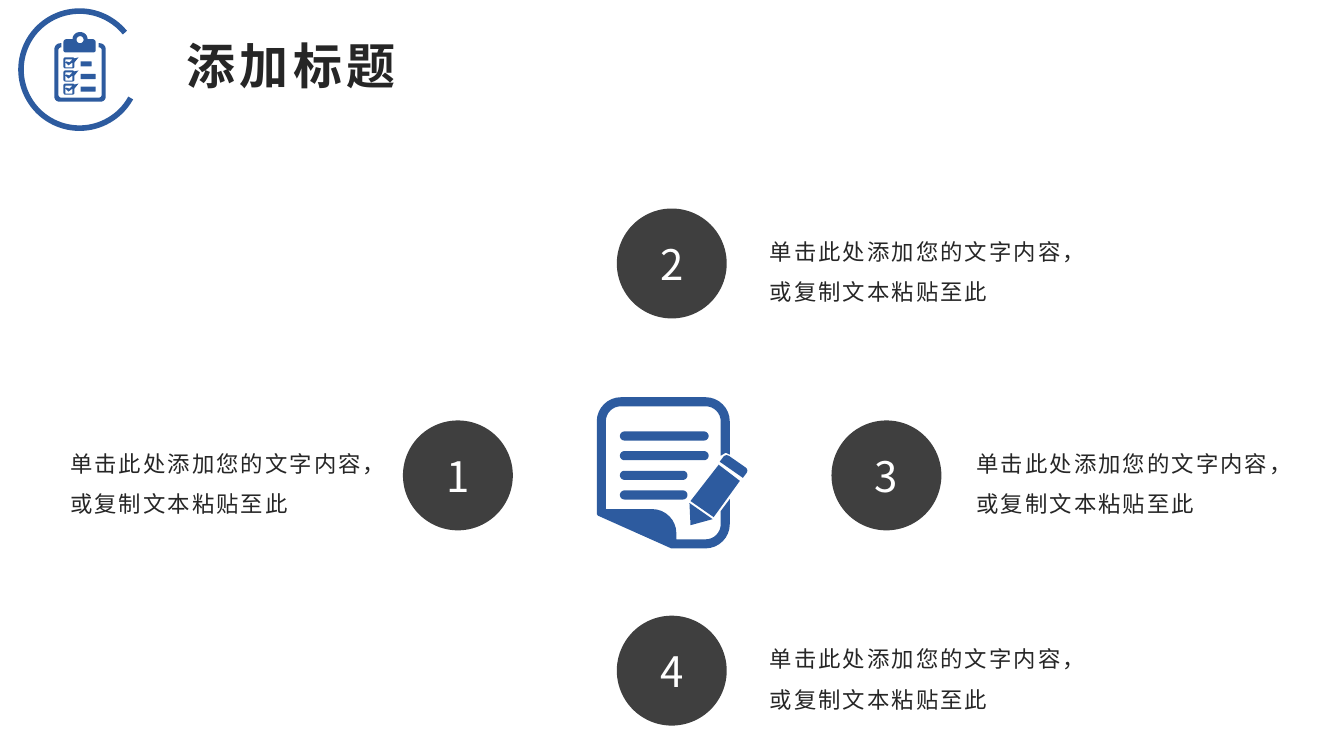
from dataclasses import dataclass

from lxml import etree
from pptx import Presentation
from pptx.dml.color import RGBColor
from pptx.enum import shapes, text
from pptx.oxml import ns
from pptx.util import Cm, Pt


@dataclass(frozen=True)
class Theme:
    face: str = "Noto Sans CJK SC"
    blue: str = "2D5B9F"
    gray: str = "3F3F3F"
    ink: str = "262626"
    white: str = "FFFFFF"
    head: int = 35
    digit: int = 30
    body: int = 16


THEME = Theme()
UNIT = 0.0254
DISC = 2.77
NOTE = "单击此处添加您的文字内容，或复制文本粘贴至此"
STEPS = [
    ("1", 11.54, 11.98, 1.52),
    ("2", 16.93, 6.64, 19.15),
    ("3", 22.34, 11.98, 24.36),
    ("4", 16.93, 16.9, 19.15),
]


def style(para, size, color, gap=0, bold=False):
    font = para.font
    font.size = Pt(size)
    font.bold = bold
    font.color.rgb = RGBColor.from_string(color)
    font.name = THEME.face
    props = font._rPr
    etree.SubElement(props, ns.qn("a:ea")).set("typeface", THEME.face)
    if gap:
        props.set("spc", str(gap))


def paint(shape, color):
    shape.shadow.inherit = False
    shape.fill.solid()
    shape.fill.fore_color.rgb = RGBColor.from_string(color)
    shape.line.fill.background()


def toward(start, end, dist):
    dx, dy = end[0] - start[0], end[1] - start[1]
    size = (dx * dx + dy * dy) ** 0.5
    return start[0] + dx / size * dist, start[1] + dy / size * dist


def smooth(knots):
    points = []
    for i, knot in enumerate(knots):
        spot = knot[:2]
        if len(knot) == 2:
            points.append(spot)
            continue
        a = toward(spot, knots[i - 1], knot[2])
        d = toward(spot, knots[(i + 1) % len(knots)], knot[2])
        b, c = toward(a, spot, knot[2] * 0.55), toward(d, spot, knot[2] * 0.55)
        for t in (n / 8 for n in range(9)):
            u = 1 - t
            points.append(tuple(
                u**3 * a[k] + 3 * u * u * t * b[k] + 3 * u * t * t * c[k] + t**3 * d[k]
                for k in (0, 1)))
    return points


def box(x, y, w, h, r=0.5):
    return [(x, y, r), (x + w, y, r), (x + w, y + h, r), (x, y + h, r)]


def icon(slide, left, top, paths):
    pen = None
    for path in paths:
        spots = [(Cm(x * UNIT), Cm(y * UNIT)) for x, y in smooth(path)]
        if pen is None:
            pen = slide.shapes.build_freeform(*spots[0])
        else:
            pen.move_to(*spots[0])
        pen.add_line_segments(spots[1:], close=True)
    paint(pen.convert_to_shape(Cm(left), Cm(top)), THEME.blue)


def ring(slide):
    arc = slide.shapes.add_shape(
        shapes.MSO_SHAPE.ARC, Cm(0.53), Cm(0.28), Cm(2.95), Cm(2.95))
    arc.shadow.inherit = False
    arc.adjustments[0] = 17.4
    arc.adjustments[1] = 192.5
    arc.fill.background()
    arc.line.color.rgb = RGBColor.from_string(THEME.blue)
    arc.line.width = Pt(4)


def clipboard(slide):
    frame = [(7, 11), (0, 11, 6), (0, 69, 5), (51, 69, 5), (51, 11, 6), (44, 11),
             (44, 15), (47, 15, 3), (47, 65, 3), (4, 65, 3), (4, 15, 3), (7, 15)]
    clip = [(9, 20, 2), (9, 7, 3), (18, 7), (18, 0, 7), (33, 0, 7), (33, 7),
            (41, 7, 3), (41, 20, 2)]
    paths = [frame, clip, box(22, 4, 7, 7, 3.5)]
    for i, width in enumerate((11, 15, 15)):
        y = 25 + 13 * i
        check = [(9, y, 2), (19, y, 1), (20, y + 1), (24, y), (20, y + 5),
                 (20, y + 11, 2), (9, y + 11, 2)]
        hole = [(11, y + 2), (18, y + 2), (15, y + 5), (12, y + 4), (11, y + 5),
                (14, y + 8), (18, y + 5), (18, y + 10), (11, y + 10)]
        paths += [check, hole, box(26, 29 + 12.5 * i, width, 5)]
    icon(slide, 1.37, 0.81, paths)


def notepad(slide):
    page = [(132, 57), (132, 0, 24), (0, 0, 24), (0, 117, 2), (74, 150),
            (132, 150, 24), (132, 101), (123, 113), (123, 141, 15), (79, 141),
            (79, 111, 24), (9, 111), (9, 9, 15), (123, 9, 15), (123, 58), (128, 55)]
    shaft = [(121, 67), (142, 83), (116, 119), (93, 103)]
    tip = [(92, 105), (93, 127), (115, 121)]
    cap = [(122, 64), (128, 56, 4), (151, 72, 4), (145, 80)]
    lines = [box(23, 34 + 19.5 * i, width, 9, 4.5)
             for i, width in enumerate((88, 88, 67, 67))]
    icon(slide, 15.04, 10.01, [page, shaft, tip, cap, *lines])


def disc(slide, digit, x, y):
    oval = slide.shapes.add_shape(
        shapes.MSO_SHAPE.OVAL, Cm(x - DISC / 2), Cm(y - DISC / 2), Cm(DISC), Cm(DISC))
    paint(oval, THEME.gray)
    frame = oval.text_frame
    frame.vertical_anchor = text.MSO_ANCHOR.MIDDLE
    para = frame.paragraphs[0]
    para.text = digit
    para.alignment = text.PP_ALIGN.CENTER
    style(para, THEME.digit, THEME.white)


def label(slide, left, y):
    frame = slide.shapes.add_textbox(
        Cm(left), Cm(y - 1.1), Cm(7.98), Cm(2.18)).text_frame
    frame.word_wrap = True
    para = frame.paragraphs[0]
    para.text = NOTE
    para.line_spacing = 1.5
    style(para, THEME.body, THEME.ink, gap=150)


def heading(slide):
    title = slide.shapes.title
    title.left, title.top, title.width, title.height = Cm(4.45), Cm(0.76), Cm(24), Cm(1.75)
    frame = title.text_frame
    frame.auto_size = text.MSO_AUTO_SIZE.NONE
    frame.vertical_anchor = text.MSO_ANCHOR.MIDDLE
    para = frame.paragraphs[0]
    para.text = "添加标题"
    para.alignment = text.PP_ALIGN.LEFT
    style(para, THEME.head, THEME.ink, gap=300, bold=True)


def main():
    deck = Presentation()
    deck.slide_width, deck.slide_height = Cm(33.87), Cm(19.05)
    slide = deck.slides.add_slide(deck.slide_layouts.get_by_name("Title Only"))
    heading(slide)
    ring(slide)
    clipboard(slide)
    notepad(slide)
    for digit, x, y, left in STEPS:
        disc(slide, digit, x, y)
        label(slide, left, y)
    deck.save("out.pptx")


if __name__ == "__main__":
    main()
